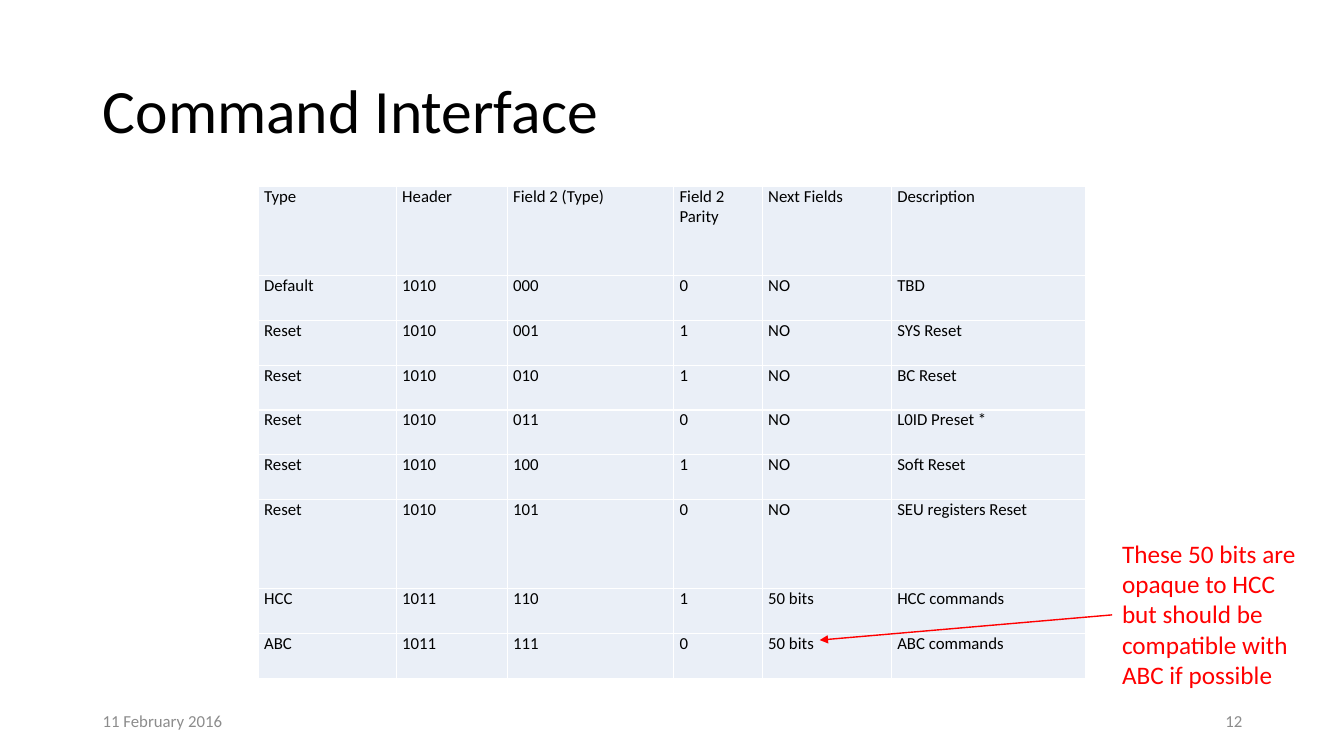
from dataclasses import dataclass

from lxml.etree import SubElement
from pptx import Presentation
from pptx.dml.color import RGBColor
from pptx.enum.shapes import MSO_CONNECTOR
from pptx.enum.text import MSO_ANCHOR, PP_ALIGN
from pptx.oxml.ns import qn
from pptx.util import Inches, Pt

FONT = "Calibri"
BLACK, WHITE, RED, GREY, PALE_BLUE = "000000", "FFFFFF", "FF0000", "8C8C8C", "EAEFF7"
COLUMN_WIDTHS = [1.37, 1.1, 1.65, 0.88, 1.28, 1.93]
ROW_UNIT = 4.88 / 11
TALL_ROWS = (0, 6)
COMMANDS = [
    ["Type", "Header", "Field 2 (Type)", "Field 2 Parity", "Next Fields", "Description"],
    ["Default", "1010", "000", "0", "NO", "TBD"],
    ["Reset", "1010", "001", "1", "NO", "SYS Reset"],
    ["Reset", "1010", "010", "1", "NO", "BC Reset"],
    ["Reset", "1010", "011", "0", "NO", "L0ID Preset *"],
    ["Reset", "1010", "100", "1", "NO", "Soft Reset"],
    ["Reset", "1010", "101", "0", "NO", "SEU registers Reset"],
    ["HCC", "1011", "110", "1", "50 bits", "HCC commands"],
    ["ABC", "1011", "111", "0", "50 bits", "ABC commands"],
]


@dataclass
class Label:
    """A text box with its place and look."""
    text: str
    left: float
    top: float
    width: float
    height: float
    size: int
    color: str
    anchor: MSO_ANCHOR = MSO_ANCHOR.MIDDLE
    align: PP_ALIGN = PP_ALIGN.LEFT


LABELS = [
    Label("These 50 bits are opaque to HCC but should be compatible with ABC if possible",
          11.03, 5.29, 1.99, 1.62, 18, RED, MSO_ANCHOR.TOP),
    Label("11 February 2016", 0.92, 6.95, 3, 0.4, 12, GREY),
    Label("12", 9.42, 6.95, 3, 0.4, 12, GREY, align=PP_ALIGN.RIGHT),
]


def rgb(color: str) -> RGBColor:
    """Turn a hex string into a colour."""
    return RGBColor.from_string(color)


def write(tf, text: str, size: int, color: str, align: PP_ALIGN = PP_ALIGN.LEFT) -> None:
    """Put one formatted run in the first paragraph of a text frame."""
    p = tf.paragraphs[0]
    p.alignment = align
    r = p.add_run()
    r.text = text
    r.font.name = FONT
    r.font.size = Pt(size)
    r.font.color.rgb = rgb(color)


def add_title(s, text: str) -> None:
    """Place and fill the title placeholder."""
    sp = s.shapes.title
    sp.left, sp.top, sp.width, sp.height = map(Inches, (0.92, 0.4, 11.5, 1.45))
    sp.text_frame.vertical_anchor = MSO_ANCHOR.MIDDLE
    write(sp.text_frame, text, 44, BLACK)
    sp.text_frame.paragraphs[0].line_spacing = 0.9


def add_label(s, label: Label) -> None:
    """Draw a text box."""
    box = map(Inches, (label.left, label.top, label.width, label.height))
    tf = s.shapes.add_textbox(*box).text_frame
    tf.word_wrap = True
    tf.vertical_anchor = label.anchor
    write(tf, label.text, label.size, label.color, label.align)


def format_cell(cell, text: str) -> None:
    """Fill a table cell and give it thin white borders."""
    cell.margin_left = cell.margin_right = Inches(0.06)
    cell.margin_top = cell.margin_bottom = 0
    tc_pr = cell._tc.get_or_add_tcPr()
    for side in ("lnL", "lnR", "lnT", "lnB"):
        ln = SubElement(tc_pr, qn(f"a:{side}"), w=str(Pt(1)))
        SubElement(SubElement(ln, qn("a:solidFill")), qn("a:srgbClr"), val=WHITE)
    cell.fill.solid()
    cell.fill.fore_color.rgb = rgb(PALE_BLUE)
    write(cell.text_frame, text, 12, BLACK)


def add_command_table(s) -> None:
    """Draw the table of commands."""
    box = map(Inches, (2.56, 1.85, sum(COLUMN_WIDTHS), 11 * ROW_UNIT))
    table = s.shapes.add_table(len(COMMANDS), len(COLUMN_WIDTHS), *box).table
    for column, width in zip(table.columns, COLUMN_WIDTHS):
        column.width = Inches(width)
    for i, values in enumerate(COMMANDS):
        table.rows[i].height = Inches(ROW_UNIT * (2 if i in TALL_ROWS else 1))
        for j, text in enumerate(values):
            format_cell(table.cell(i, j), text)


def add_arrow(s, x1: float, y1: float, x2: float, y2: float) -> None:
    """Draw a red arrow from the first point to the second."""
    sp = s.shapes.add_connector(MSO_CONNECTOR.STRAIGHT, *map(Inches, (x1, y1, x2, y2)))
    sp.line.color.rgb = rgb(RED)
    sp.line.width = Pt(1)
    SubElement(sp.line._get_or_add_ln(), qn("a:tailEnd"), type="triangle")
    SubElement(sp._element.spPr, qn("a:effectLst"))


def main() -> None:
    """Build and save the slide."""
    prs = Presentation()
    prs.slide_width, prs.slide_height = Inches(13.33), Inches(7.5)
    s = prs.slides.add_slide(prs.slide_layouts[5])
    add_title(s, "Command Interface")
    add_command_table(s)
    for label in LABELS:
        add_label(s, label)
    add_arrow(s, 11.03, 6.1, 8.13, 6.35)
    prs.save("out.pptx")


if __name__ == "__main__":
    main()
